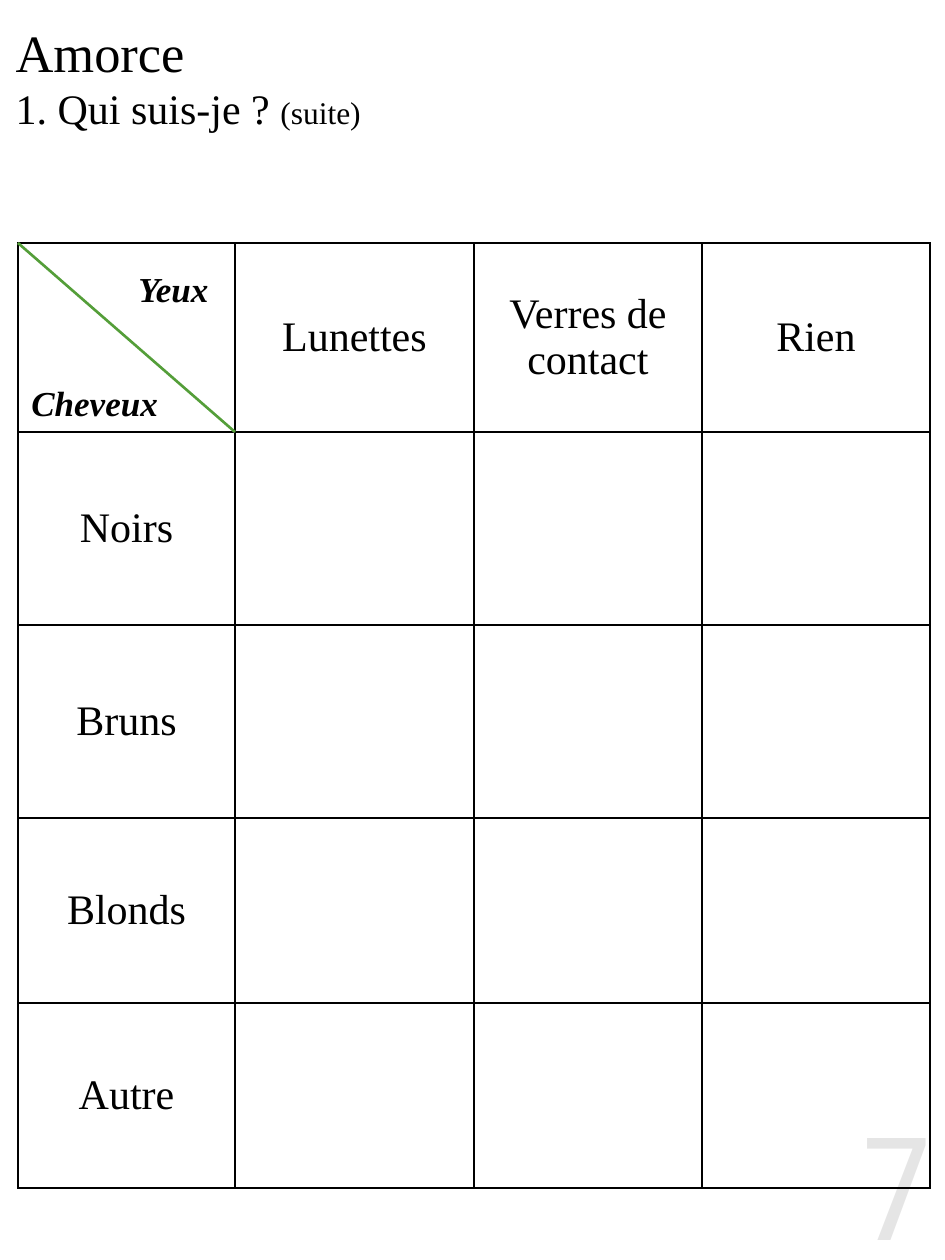
from lxml.etree import SubElement
from pptx import Presentation
from pptx.dml.color import RGBColor
from pptx.enum.shapes import MSO_CONNECTOR as Connector
from pptx.enum.text import MSO_ANCHOR as Anchor, MSO_AUTO_SIZE as AutoSize, PP_ALIGN as Align
from pptx.oxml.ns import qn
from pptx.util import Pt

PX = 914400 / 126
BLACK, GREEN = "000000", "549E39"
SERIF = "Times New Roman"


def emu(*lengths):
    return [round(length * PX) for length in lengths]


def color(hex_string):
    return RGBColor.from_string(hex_string)


class SlideBuilder:
    def __init__(self, presentation):
        self.slide = presentation.slides.add_slide(presentation.slide_layouts[5])
        self.style = {"name": SERIF, "size": 24, "bold": False, "italic": False}

    def add_run(self, paragraph, text, **changes):
        run = paragraph.add_run()
        run.text = text
        for name, value in {**self.style, **changes}.items():
            setattr(run.font, name, Pt(value) if name == "size" else value)
        run.font.color.rgb = color(BLACK)
        return run

    def title(self, box, lines):
        """Fill the title; each line is a list of (text, size) pairs."""
        shape = self.slide.shapes.title
        shape.left, shape.top, shape.width, shape.height = emu(*box)
        frame = shape.text_frame
        frame.auto_size, frame.vertical_anchor = AutoSize.NONE, Anchor.MIDDLE
        for index, line in enumerate(lines):
            paragraph = frame.add_paragraph() if index else frame.paragraphs[0]
            paragraph.alignment = Align.LEFT
            for text, size in line:
                self.add_run(paragraph, text, size=size)

    def text(self, box, text, align=Align.LEFT, anchor=Anchor.TOP, **changes):
        frame = self.slide.shapes.add_textbox(*emu(*box)).text_frame
        frame.word_wrap, frame.vertical_anchor = True, anchor
        paragraph = frame.paragraphs[0]
        paragraph.alignment = align
        return self.add_run(paragraph, text, **changes)

    def line(self, start, end, hex_string, width):
        line = self.slide.shapes.add_connector(Connector.STRAIGHT, *emu(*start, *end))
        line.line.color.rgb, line.line.width = color(hex_string), Pt(width)
        SubElement(line._element.spPr, qn("a:effectLst"))

    def border(self, cell, hex_string, width):
        properties = cell._tc.get_or_add_tcPr()
        for side in ("lnL", "lnR", "lnT", "lnB"):
            edge = SubElement(properties, qn(f"a:{side}"), w=str(Pt(width)))
            SubElement(SubElement(edge, qn("a:solidFill")), qn("a:srgbClr"), val=hex_string)

    def table(self, left, top, widths, heights, column_labels, row_labels):
        box = emu(left, top, sum(widths), sum(heights))
        table = self.slide.shapes.add_table(len(heights), len(widths), *box).table
        table.first_row = table.horz_banding = False
        for column, width in zip(table.columns, emu(*widths)):
            column.width = width
        for row, height in zip(table.rows, emu(*heights)):
            row.height = height
        for cell in table.iter_cells():
            self.border(cell, BLACK, 1)
            cell.fill.background()
        labels = {(0, index): text for index, text in enumerate(column_labels, 1)}
        labels.update({(index, 0): text for index, text in enumerate(row_labels, 1)})
        for position, text in labels.items():
            cell = table.cell(*position)
            cell.vertical_anchor = Anchor.MIDDLE
            paragraph = cell.text_frame.paragraphs[0]
            paragraph.alignment = Align.CENTER
            self.add_run(paragraph, text)


def main():
    presentation = Presentation()
    presentation.slide_width, presentation.slide_height = emu(945, 1260)
    builder = SlideBuilder(presentation)

    builder.title((3, 3, 588, 147), [
        [("Amorce", 30)],
        [("1. Qui suis-je ? ", 24), ("(suite)", 18)],
    ])

    number = builder.text((791, 1105, 154, 156), "7", Align.RIGHT, Anchor.MIDDLE,
                          name="Roboto Condensed", size=82)
    number_color = number._r.rPr.find(f".//{qn('a:srgbClr')}")
    SubElement(number_color, qn("a:alpha"), val="10000")

    left, top = 18, 243
    widths, heights = [217, 239, 228, 228], [189, 193, 193, 185, 185]
    builder.table(left, top, widths, heights,
                  ["Lunettes", "Verres de contact", "Rien"],
                  ["Noirs", "Bruns", "Blonds", "Autre"])
    builder.line((left, top), (left + widths[0], top + heights[0]), GREEN, 1.5)

    axis_style = {"size": 20, "bold": True, "italic": True}
    builder.text((19, 375, 164, 55), "Cheveux", **axis_style)
    builder.text((126, 261, 132, 55), "Yeux", **axis_style)

    presentation.save("out.pptx")


if __name__ == "__main__":
    main()
